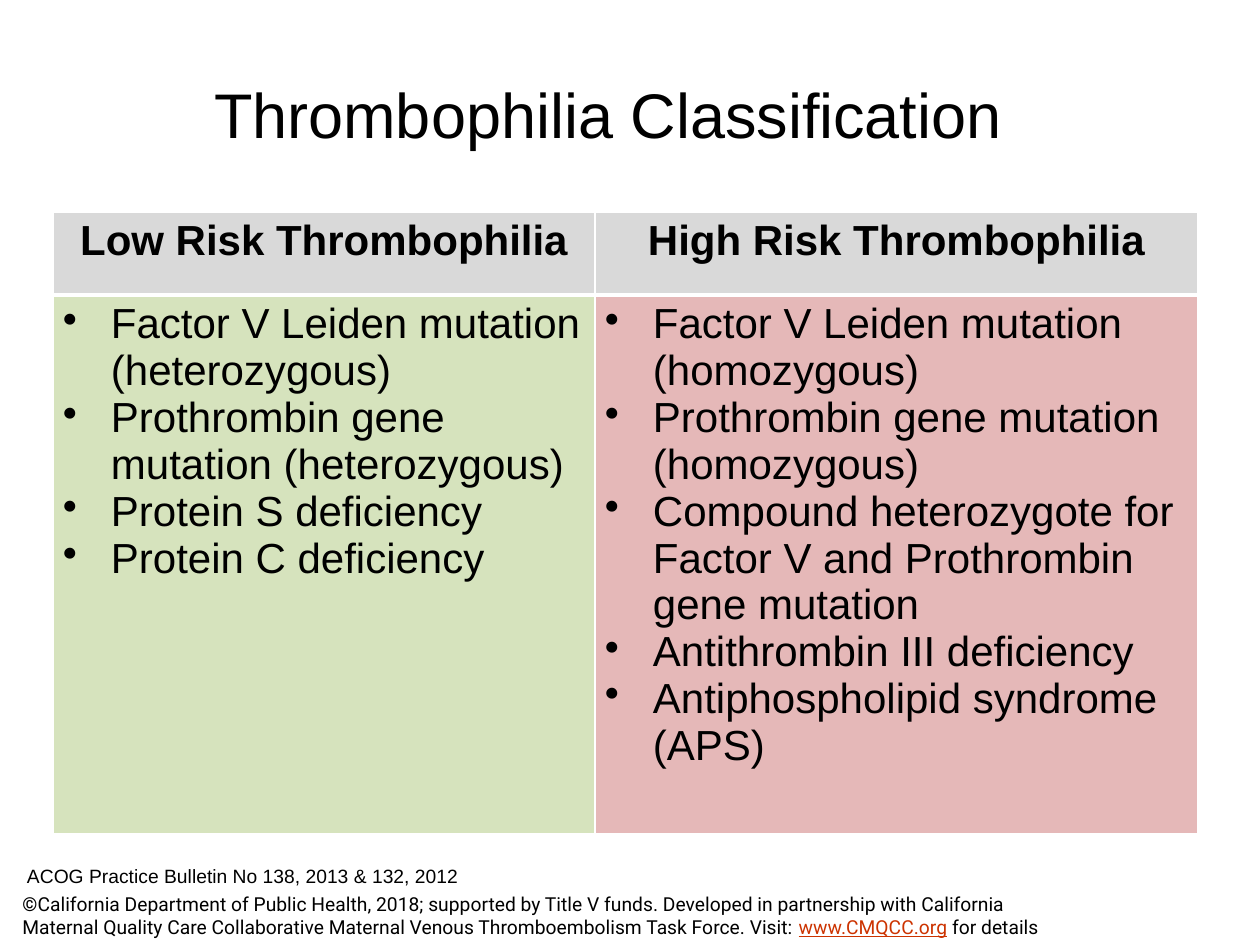
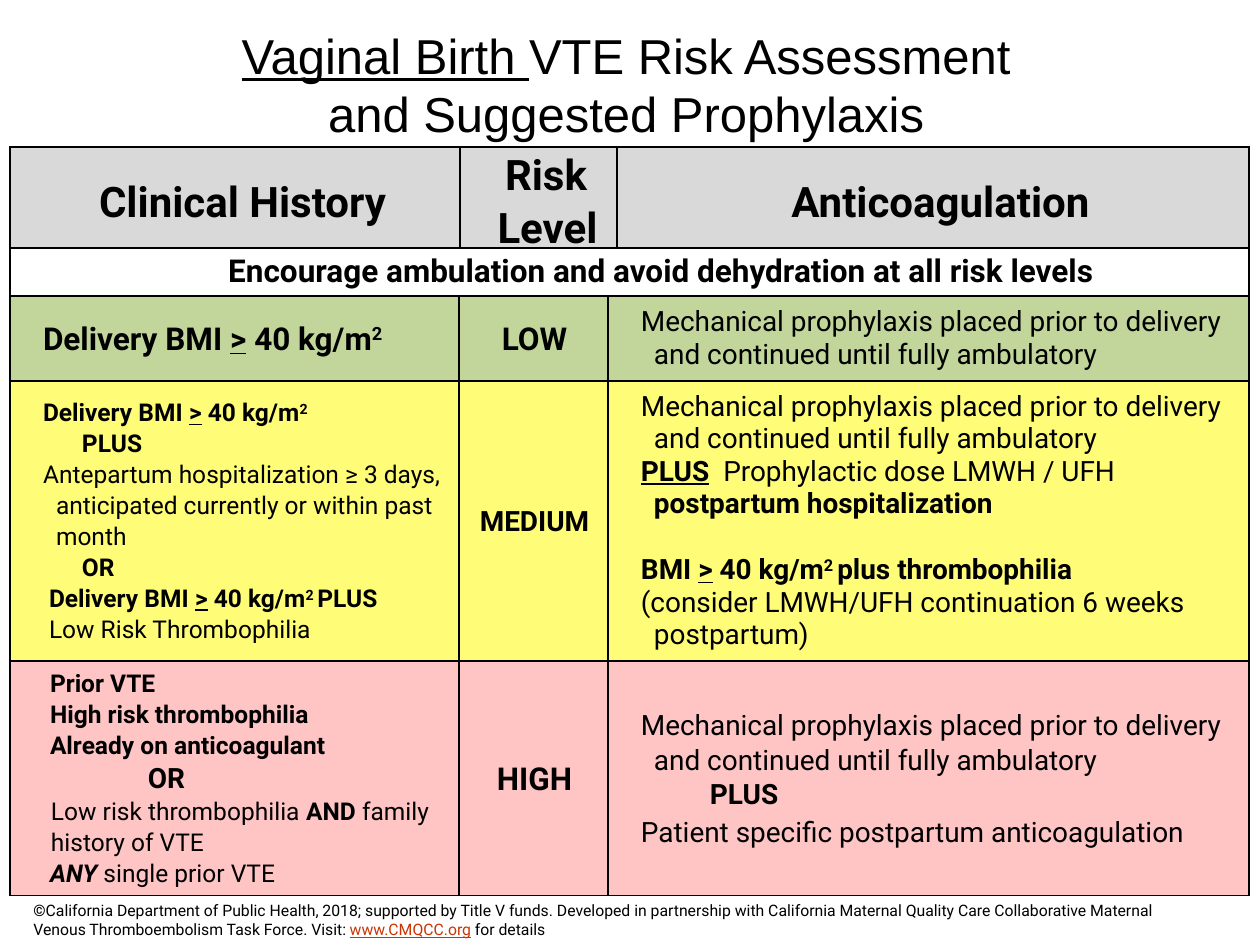
import dataclasses

import pptx
import pptx.dml.color
import pptx.enum.text
import pptx.oxml
import pptx.oxml.ns
import pptx.util

PX = 914400 / 126
NS = pptx.oxml.ns.nsdecls("a")
ALIGN = pptx.enum.text.PP_ALIGN
ANCHOR = pptx.enum.text.MSO_ANCHOR


@dataclasses.dataclass(frozen=True)
class Theme:
    heading_font: str = "Arial"
    text_font: str = "Roboto"
    black: str = "000000"
    white: str = "FFFFFF"
    link: str = "CC3300"
    header: str = "D9D9D9"
    pale_green: str = "D6E3BD"
    pale_red: str = "E5B8B8"
    low: str = "C2D69B"
    medium: str = "FFFD78"
    high: str = "FFC5C5"
    title: int = 36
    small_title: int = 28
    header_size: int = 24
    level: int = 18
    body: int = 16
    detail: int = 14
    source: int = 11
    small_source: int = 9


THEME = Theme()
BOLD = {"bold": True}
UNDER = {"underline": True}
BOLD_UNDER = BOLD | UNDER
SUPER = {"bold": True, "baseline": 30000}


def write(frame, paragraphs, size, font=THEME.text_font, align=ALIGN.LEFT):
    """Fill a frame with (paragraph formats, [(text, run formats), ...]) pairs."""
    for index, (formats, spans) in enumerate(paragraphs):
        para = frame.paragraphs[0] if index == 0 else frame.add_paragraph()
        props = para._p.get_or_add_pPr()
        left, first = formats.get("indent", (0, 0))
        props.set("marL", str(round(left * PX)))
        props.set("indent", str(round(first * PX)))
        bullet = '<a:buChar %s char="•"/>' if formats.get("bullet") else "<a:buNone %s/>"
        props.append(pptx.oxml.parse_xml(bullet % NS))
        para.alignment = align
        para.line_spacing = formats.get("spacing", 1.0)
        para.space_before = pptx.util.Pt(formats.get("before", 0))
        para.space_after = pptx.util.Pt(0)
        for text, changes in spans:
            span = para.add_run()
            span.text = text
            style = {"name": font, "size": size, "bold": False, "color": THEME.black} | changes
            span.font.size = pptx.util.Pt(style.pop("size"))
            span.font.color.rgb = pptx.dml.color.RGBColor.from_string(style.pop("color"))
            for name, value in style.items():
                if name in ("baseline", "spc"):
                    span._r.get_or_add_rPr().set(name, str(value))
                else:
                    setattr(span.font, name, value)


def add_grid(page, left, top, widths, heights, fills, border, margins, anchor):
    """Add a table with plain borders; fills holds one row of colours per table row."""
    frame = page.shapes.add_table(len(heights), len(widths), round(left * PX), round(top * PX),
                                  round(sum(widths) * PX), round(sum(heights) * PX))
    table = frame.table
    table.first_row = table.horz_banding = False
    for column, width in zip(table.columns, widths):
        column.width = round(width * PX)
    for row, height, colors in zip(table.rows, heights, fills):
        row.height = round(height * PX)
        for cell, color in zip(row.cells, colors):
            props = cell._tc.get_or_add_tcPr()
            for side in "LRTB":
                props.append(pptx.oxml.parse_xml(
                    f'<a:ln{side} {NS} w="12700"><a:solidFill><a:srgbClr val="{border}"/>'
                    f"</a:solidFill></a:ln{side}>"))
            cell.fill.solid()
            cell.fill.fore_color.rgb = pptx.dml.color.RGBColor.from_string(color)
            cell.vertical_anchor = anchor
            cell.margin_left = cell.margin_right = round(margins[0] * PX)
            cell.margin_top = cell.margin_bottom = round(margins[1] * PX)
    return table


deck = pptx.Presentation()
deck.slide_width, deck.slide_height = round(1260 * PX), round(945 * PX)

# Titles and source lines of both slides
frames = [
    ((175, 32, 866, 163), THEME.title, [("Thrombophilia Classification", {})],
     (10, 886, 1061, 59), THEME.source),
    ((192, 21, 868, 126), THEME.small_title,
     [("Vaginal Birth ", UNDER), ("VTE Risk Assessment and Suggested Prophylaxis", {})],
     (21, 895, 1187, 50), THEME.small_source),
]
source = [
    ("©", BOLD),
    ("California Department of Public Health, 2018; supported by Title V funds. Developed in "
     "partnership with California Maternal Quality Care Collaborative Maternal Venous "
     "Thromboembolism Task Force. Visit: ", {}),
    ("www.CMQCC.org", UNDER | {"color": THEME.link}),
    (" for details", {}),
]
pages = []
for title_area, title_size, title_spans, source_area, source_size in frames:
    page = deck.slides.add_slide(deck.slide_layouts[5])
    title = page.shapes.title
    title.left, title.top, title.width, title.height = (round(n * PX) for n in title_area)
    title.text_frame.auto_size = pptx.enum.text.MSO_AUTO_SIZE.NONE
    title.text_frame.vertical_anchor = ANCHOR.MIDDLE
    write(title.text_frame, [({}, title_spans)], title_size, THEME.heading_font, ALIGN.CENTER)
    box = page.shapes.add_textbox(*(round(n * PX) for n in source_area))
    box.text_frame.word_wrap = True
    write(box.text_frame, [({}, source)], source_size)
    pages.append(page)
classification, assessment = pages

# Slide 1: low and high risk thrombophilia
box = classification.shapes.add_textbox(*(round(n * PX) for n in (21, 858, 636, 45)))
box.text_frame.word_wrap = True
for side in ("left", "top", "right", "bottom"):
    setattr(box.text_frame, f"margin_{side}", round(6 * PX))
write(box.text_frame, [({}, [("ACOG Practice Bulletin No 138, 2013 & 132, 2012", {})])],
      THEME.source, THEME.heading_font)

risks = [
    ("Low Risk Thrombophilia",
     ["Factor V Leiden mutation (heterozygous)", "Prothrombin gene mutation (heterozygous)",
      "Protein S deficiency", "Protein C deficiency"]),
    ("High Risk Thrombophilia",
     ["Factor V Leiden mutation (homozygous)", "Prothrombin gene mutation (homozygous)",
      "Compound heterozygote for Factor V and Prothrombin gene mutation",
      "Antithrombin III deficiency", "Antiphospholipid syndrome (APS)"]),
]
table = add_grid(classification, 53, 212, (542, 603), (83, 539),
                 [(THEME.header, THEME.header), (THEME.pale_green, THEME.pale_red)],
                 THEME.white, (10, 6), ANCHOR.TOP)
for column, (heading, conditions) in enumerate(risks):
    write(table.cell(0, column).text_frame, [({}, [(heading, BOLD)])],
          THEME.header_size, THEME.heading_font, ALIGN.CENTER)
    bullets = [({"indent": (48, -48), "bullet": True}, [(name, {})]) for name in conditions]
    write(table.cell(1, column).text_frame, bullets, THEME.header_size, THEME.heading_font)
    for row, side in ((0, "B"), (1, "T")):
        line = table.cell(row, column)._tc.tcPr.find(pptx.oxml.ns.qn(f"a:ln{side}"))
        line.set("w", str(pptx.util.Pt(3)))

# Slide 2: column headings
table = add_grid(assessment, 10, 147, (450, 157, 632), (101,), [[THEME.header] * 3],
                 THEME.black, (9, 0), ANCHOR.MIDDLE)
for cell, heading in zip(table.rows[0].cells, ("Clinical History", "Risk Level", "Anticoagulation")):
    write(cell.text_frame, [({"indent": (18, -3), "spacing": 1.07}, [(heading, BOLD)])],
          THEME.header_size, align=ALIGN.CENTER)

# Slide 2: risk levels
HANG = {"indent": (37, -13)}
LOOSE = HANG | {"spacing": 1.07}
FACTOR = {"indent": (45, -14), "spacing": 1.07}
INSET = {"indent": (30, 0), "spacing": 1.07}
bmi = [("Delivery BMI ", BOLD), (">", BOLD_UNDER), (" 40 kg/m", BOLD), ("2", SUPER)]
mechanical = [("Mechanical prophylaxis placed prior to delivery and continued until fully ambulatory", {})]

medium_history = [
    (LOOSE, bmi),
    ({"indent": (60, 3), "spacing": 1.07}, [("PLUS", BOLD)]),
    (LOOSE, [("Antepartum hospitalization ≥ 3 days, anticipated currently or within past month", {})]),
    ({"indent": (76, -13), "spacing": 1.07}, [("OR", BOLD)]),
    (INSET, bmi[:3] + [("2 ", SUPER), ("PLUS", BOLD)]),
    (INSET, [("Low Risk Thrombophilia", {})]),
]
medium_care = [
    (HANG, mechanical),
    (HANG, [("PLUS", BOLD_UNDER), (" ", {"spc": 400}), ("Prophylactic dose LMWH / UFH ", {}),
            ("postpartum hospitalization", BOLD)]),
    (HANG | {"before": 19}, [("BMI ", BOLD), (">", BOLD_UNDER), (" 40 kg/m", BOLD), ("2 ", SUPER),
                             ("plus thrombophilia", BOLD)]),
    (HANG, [("(consider LMWH/UFH continuation 6 weeks postpartum)", {})]),
]
high_history = [
    (FACTOR, [("Prior VTE", BOLD)]),
    (FACTOR, [("High risk thrombophilia", BOLD)]),
    (FACTOR, [("Already on anticoagulant", BOLD)]),
    ({"indent": (129, 0), "spacing": 1.07}, [("OR", BOLD | {"size": THEME.body})]),
    ({"indent": (32, 0), "spacing": 1.07},
     [("Low risk thrombophilia ", {}), ("AND", BOLD), (" family history of VTE", {})]),
    (FACTOR, [("ANY", BOLD | {"italic": True}), (" single prior VTE", {})]),
]
high_care = [
    (LOOSE, mechanical),
    ({"indent": (106, -13), "spacing": 1.07}, [("PLUS", BOLD)]),
    (HANG | {"spacing": 1.15}, [("Patient specific postpartum anticoagulation", {})]),
]
levels = [
    ("LOW", THEME.level, THEME.level, [(LOOSE, bmi)], [(HANG, mechanical)]),
    ("MEDIUM", THEME.body, THEME.detail, medium_history, medium_care),
    ("HIGH", THEME.level, THEME.detail, high_history, high_care),
]
fills = [[color] * 3 for color in (THEME.white, THEME.low, THEME.medium, THEME.high)]
table = add_grid(assessment, 10, 248, (449, 149, 641), (48, 85, 280, 234), fills,
                 THEME.black, (9, 5), ANCHOR.MIDDLE)
table.cell(0, 0).merge(table.cell(0, 2))
write(table.cell(0, 0).text_frame,
      [({"indent": (63, 0)}, [("Encourage ambulation and avoid dehydration at all risk levels", BOLD)])],
      THEME.level, align=ALIGN.CENTER)
for row, (level, level_size, history_size, history, care) in enumerate(levels, start=1):
    write(table.cell(row, 0).text_frame, history, history_size)
    write(table.cell(row, 1).text_frame, [({"indent": (0, 2), "spacing": 1.07}, [(level, BOLD)])],
          level_size, align=ALIGN.CENTER)
    write(table.cell(row, 2).text_frame, care, THEME.body)

deck.save("out.pptx")
